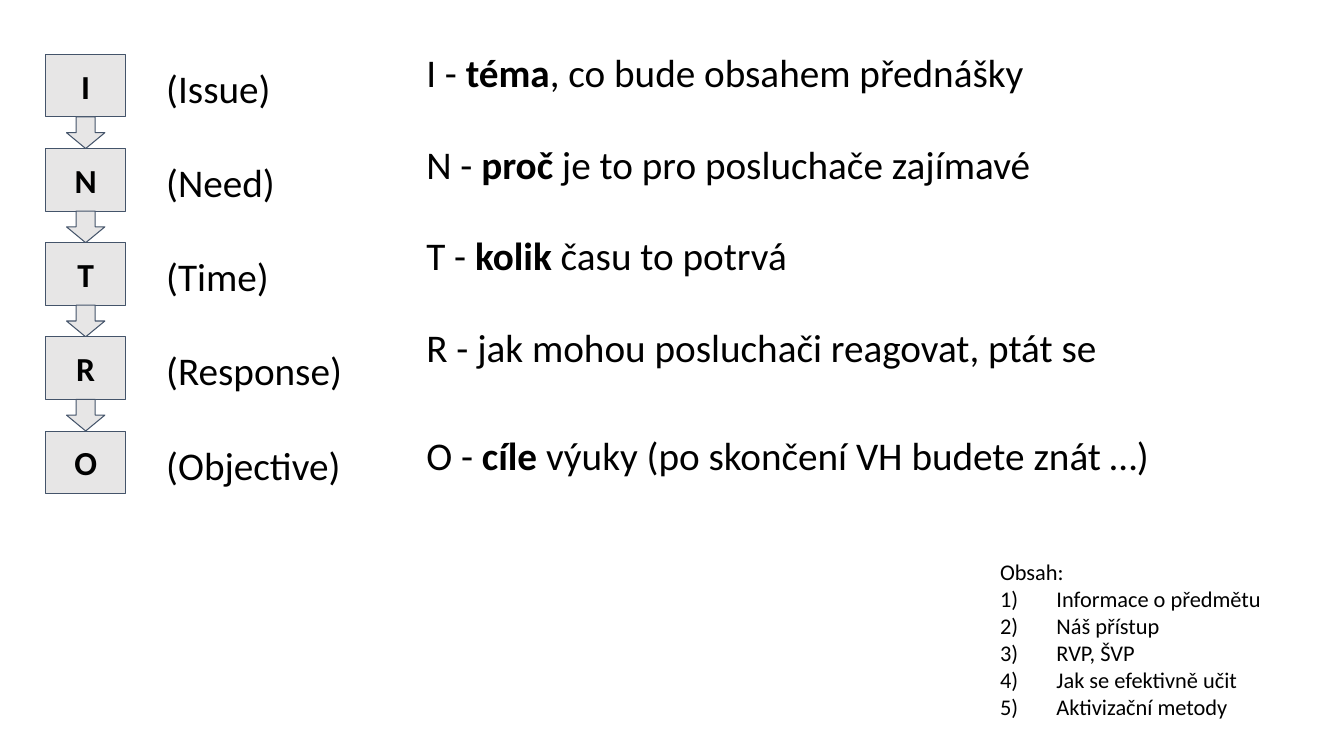
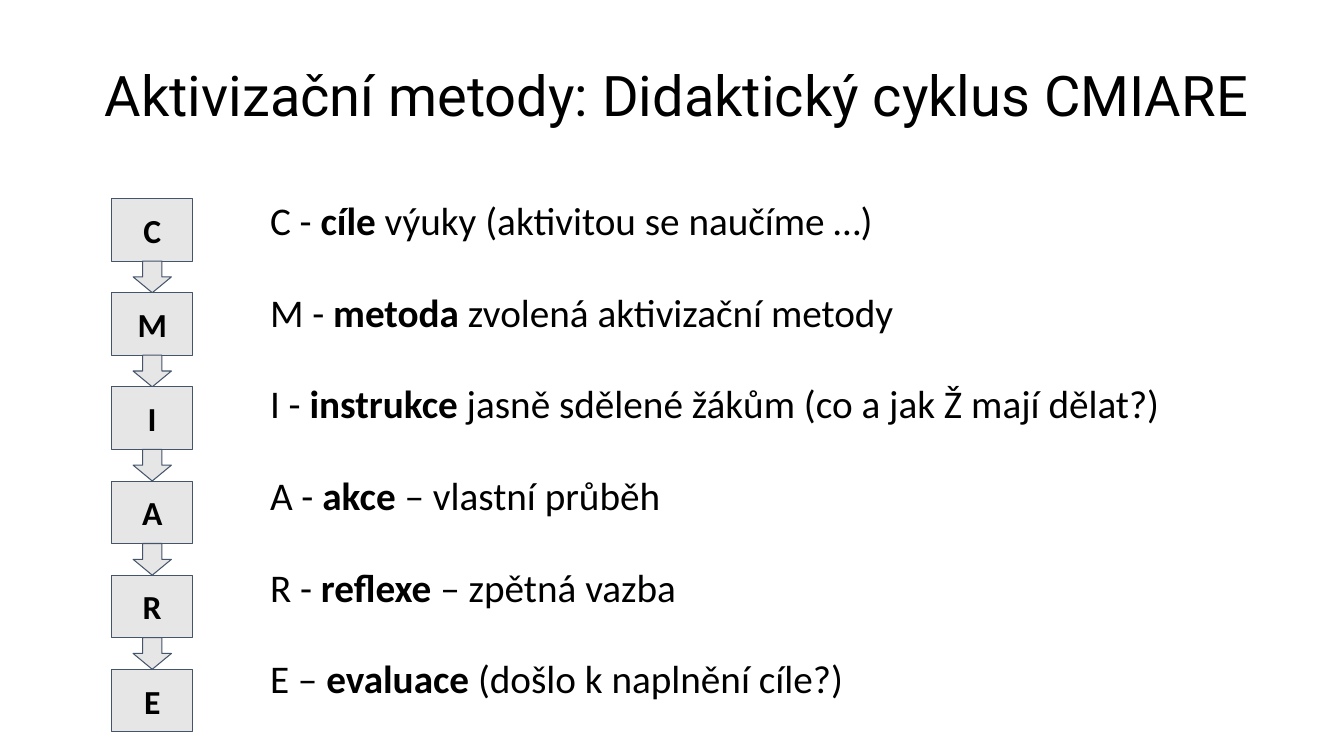
from lxml import etree
from pptx import Presentation
from pptx.dml.color import RGBColor
from pptx.enum import shapes, text
from pptx.oxml.ns import qn
from pptx.util import Inches, Pt

BLACK = RGBColor(0x00, 0x00, 0x00)
BOX_FILL = RGBColor(0xE7, 0xE6, 0xE6)
BOX_LINE = RGBColor(0x44, 0x54, 0x6A)
BODY_FONT, TITLE_FONT = "Calibri", "Roboto"

# Letter chain: boxes at an equal pitch, an arrow filling each gap
BOX_W, BOX_H = 0.8, 0.62
ARROW_W = 0.38
PITCH = 4.67 / 5
GAP = PITCH - BOX_H

# Space in points between lines of text
LABEL_GAP = 33.6
LINE_GAP = 31.8
WIDE_GAP = 43.8


def add_text(frame, paragraphs, size, font=BODY_FONT, align=text.PP_ALIGN.LEFT):
    """Fill a frame; each paragraph is (space before, [(words, bold), ...])."""
    for index, (space, spans) in enumerate(paragraphs):
        para = frame.paragraphs[0] if index == 0 else frame.add_paragraph()
        para.alignment = align
        para.space_before = Pt(space)
        for words, bold in spans:
            span = para.add_run()
            span.text = words
            span.font.name = font
            span.font.size = Pt(size)
            span.font.bold = bold
            span.font.color.rgb = BLACK


def add_box(page, left, top, width, height, inset=0.05, wrap=True):
    """Add a text box and return its frame."""
    box = page.shapes.add_textbox(Inches(left), Inches(top), Inches(width), Inches(height))
    frame = box.text_frame
    frame.word_wrap = wrap
    frame.auto_size = text.MSO_AUTO_SIZE.NONE if wrap else text.MSO_AUTO_SIZE.SHAPE_TO_FIT_TEXT
    frame.margin_top = frame.margin_bottom = Inches(inset)
    return frame


deck = Presentation()
deck.slide_width, deck.slide_height = Inches(13.33), Inches(7.5)

# Each page: chain corner, statement corner, and (space, lead, bold word, rest)
cycles = [
    ((0.45, 0.54), (4.13, 0.43), [
        (0, "I - ", "téma", ", co bude obsahem přednášky"),
        (LINE_GAP, "N - ", "proč", " je to pro posluchače zajímavé"),
        (LINE_GAP, "T - ", "kolik", " času to potrvá"),
        (LINE_GAP, "R - ", "", "jak mohou posluchači reagovat, ptát se"),
        (WIDE_GAP, "O - ", "cíle", " výuky (po skončení VH budete znát …)"),
    ]),
    ((1.11, 1.97), (2.58, 1.9), [
        (0, "C - ", "cíle", " výuky (aktivitou se naučíme …)"),
        (LINE_GAP, "M - ", "metoda", " zvolená aktivizační metody"),
        (LINE_GAP, "I - ", "instrukce", " jasně sdělené žákům (co a jak Ž mají dělat?)"),
        (LINE_GAP, "A - ", "akce", " – vlastní průběh"),
        (LINE_GAP, "R - ", "reflexe", " – zpětná vazba"),
        (LINE_GAP, "E – ", "evaluace", " (došlo k naplnění cíle?)"),
    ]),
]

pages = []
for (chain_left, chain_top), (text_left, text_top), statements in cycles:
    page = deck.slides.add_slide(deck.slide_layouts[6])
    pages.append(page)

    # Letter boxes and arrows
    for row, (_, lead, _, _) in enumerate(statements):
        top = chain_top + row * PITCH
        parts = [(shapes.MSO_SHAPE.RECTANGLE, chain_left, top, BOX_W, BOX_H)]
        if row > 0:
            arrow_left = chain_left + (BOX_W - ARROW_W) / 2
            parts.insert(0, (shapes.MSO_SHAPE.DOWN_ARROW, arrow_left, top - GAP, ARROW_W, GAP))
        for kind, *place in parts:
            shape = page.shapes.add_shape(kind, *map(Inches, place))
            shape.shadow.inherit = False
            shape.fill.solid()
            shape.fill.fore_color.rgb = BOX_FILL
            shape.line.color.rgb = BOX_LINE
            shape.line.width = Pt(0.75)
        frame = shape.text_frame
        frame.vertical_anchor = text.MSO_ANCHOR.MIDDLE
        frame.margin_top = frame.margin_bottom = Inches(0.1)
        add_text(frame, [(0, [(lead[0], True)])], 24, align=text.PP_ALIGN.CENTER)

    # Statements with a bold key word
    lines = []
    for space, lead, key, rest in statements:
        spans = [(lead, False), (key, True), (rest, False)]
        lines.append((space, [span for span in spans if span[0]]))
    add_text(add_box(page, text_left, text_top, 9.2, 4.42), lines, 28)

intro_page, cycle_page = pages

# English labels beside the first chain
labels = ["(Issue)", "(Need)", "(Time)", "(Response)", "(Objective)"]
add_text(add_box(intro_page, 1.55, 0.54, 1.98, 4.2, inset=0.1),
         [(LABEL_GAP if row else 0, [(label, False)]) for row, label in enumerate(labels)], 28)

# Numbered contents
contents = ["Obsah:", "Informace o předmětu", "Náš přístup", "RVP, ŠVP",
            "Jak se efektivně učit", "Aktivizační metody"]
contents_frame = add_box(intro_page, 9.82, 5.49, 2.82, 1.72, wrap=False)
add_text(contents_frame, [(0, [(entry, False)]) for entry in contents], 16)
for para in contents_frame.paragraphs[1:]:
    props = para._p.get_or_add_pPr()
    props.set("marL", str(Inches(0.56)))
    props.set("indent", str(-Inches(0.56)))
    etree.SubElement(props, qn("a:buAutoNum"), type="arabicParenR")

# Title
add_text(add_box(cycle_page, 0.81, 0.55, 11.8, 0.77, wrap=False),
         [(0, [("Aktivizační metody: Didaktický cyklus CMIARE", False)])],
         40, TITLE_FONT, text.PP_ALIGN.CENTER)

deck.save("out.pptx")
